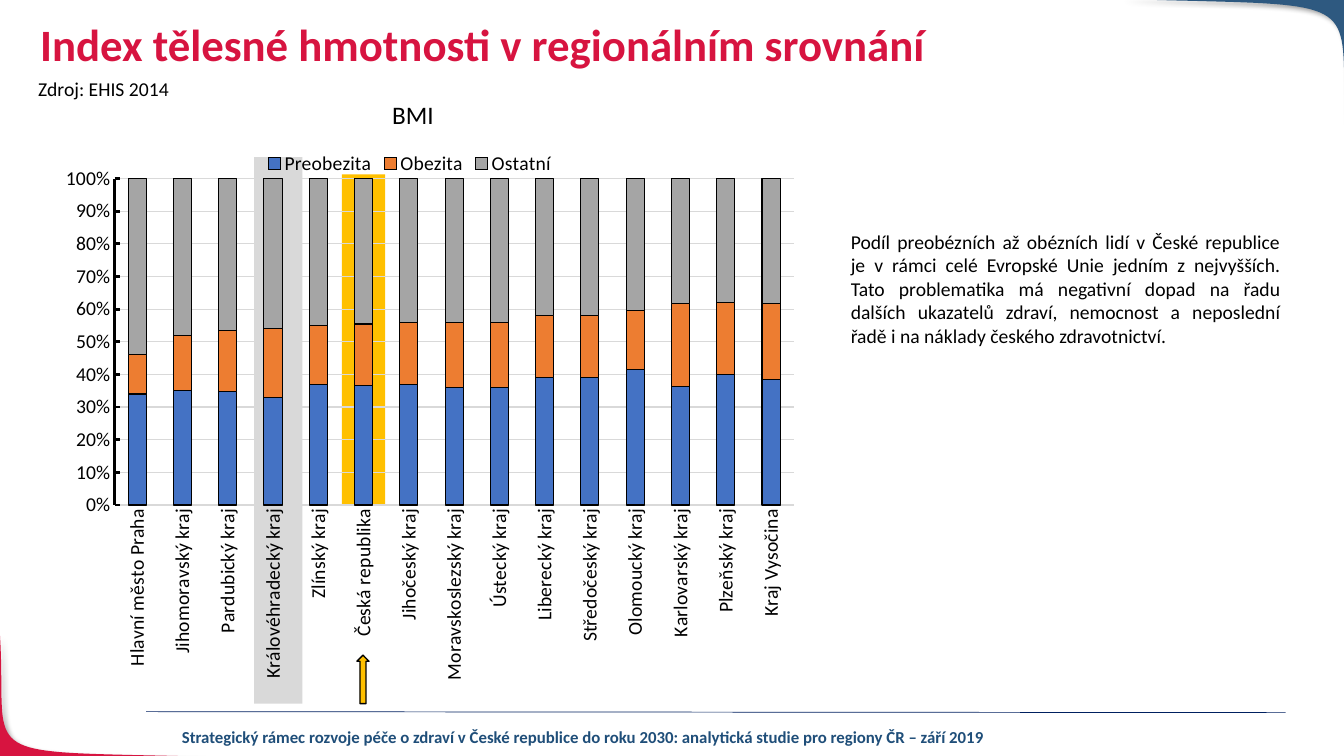
import pptx
import pptx.chart.data
import pptx.dml.color
import pptx.enum.chart
import pptx.enum.shapes
import pptx.enum.text
import pptx.oxml
import pptx.oxml.ns
import pptx.util

PX = 9144  # 100 px to the inch
SLIDE_W, SLIDE_H = 1333, 750
FONT = "Calibri"
BLACK, GRID, CRIMSON, AMBER = "000000", "D9D9D9", "D71440", "FFC000"
ALIGN = pptx.enum.text.PP_ALIGN
SHAPE = pptx.enum.shapes.MSO_SHAPE
XL = pptx.enum.chart

REGIONS = [
    "Hlavní město Praha", "Jihomoravský kraj", "Pardubický kraj",
    "Královéhradecký kraj", "Zlínský kraj", "Česká republika",
    "Jihočeský kraj", "Moravskoslezský kraj", "Ústecký kraj",
    "Liberecký kraj", "Středočeský kraj", "Olomoucký kraj",
    "Karlovarský kraj", "Plzeňský kraj", "Kraj Vysočina",
]
BMI_GROUPS = [
    ("Preobezita", "4472C4", [34, 35, 35, 33, 37, 37, 37, 36, 36, 39, 39, 41, 36, 40, 38]),
    ("Obezita", "ED7D31", [12, 17, 19, 21, 18, 19, 19, 20, 20, 19, 19, 18, 25, 22, 23]),
    ("Ostatní", "A5A5A5", [54, 48, 47, 46, 45, 45, 44, 44, 44, 42, 42, 40, 38, 38, 38]),
]


def rgb(color):
    return pptx.dml.color.RGBColor.from_string(color)


def emu(*lengths):
    return [length * PX for length in lengths]


def xml(tag, content="", attributes=""):
    """Build one element in the chart (c) or drawing (a) namespace."""
    spaces = pptx.oxml.ns.nsdecls("a", "c")
    return pptx.oxml.parse_xml(f"<{tag} {spaces} {attributes}>{content}</{tag}>")


def set_font(font, size, color=BLACK, bold=False):
    font.name, font.size, font.bold = FONT, pptx.util.Pt(size), bold
    font.color.rgb = rgb(color)


def set_line(line, color, width):
    line.color.rgb = rgb(color)
    line.width = pptx.util.Pt(width)


def add_text(slide, box, text, size, color=BLACK, bold=False,
             align=ALIGN.LEFT, wrap=True, spacing=None):
    frame = slide.shapes.add_textbox(*emu(*box)).text_frame
    frame.word_wrap = wrap
    frame.text = text
    paragraph = frame.paragraphs[0]
    paragraph.alignment = align
    paragraph.line_spacing = spacing
    for run in paragraph.runs:
        set_font(run.font, size, color, bold)


def add_block(slide, kind, box, color):
    block = slide.shapes.add_shape(kind, *emu(*box))
    block.shadow.inherit = False
    block.fill.solid()
    block.fill.fore_color.rgb = rgb(color)
    block.line.fill.background()
    return block


def add_corner(slide, box, start, controls, end, corner, color):
    """Fill the area between a Bézier curve and a slide corner."""
    left, top = box
    steps = 40
    curve = []
    for step in range(steps + 1):
        t = step / steps
        weights = ((1 - t) ** 3, 3 * t * (1 - t) ** 2, 3 * t * t * (1 - t), t ** 3)
        points = (start, *controls, end)
        curve.append(tuple(
            round((origin + sum(w * p[axis] for w, p in zip(weights, points))) * PX)
            for axis, origin in enumerate((left, top))))
    builder = slide.shapes.build_freeform(*curve[0], scale=1.0)
    builder.add_line_segments(curve[1:] + [((left + corner[0]) * PX, (top + corner[1]) * PX)])
    shape = builder.convert_to_shape()
    shape.fill.solid()
    shape.fill.fore_color.rgb = rgb(color)
    shape.line.fill.background()
    shape.element.spPr.append(xml(
        "a:effectLst",
        '<a:outerShdw blurRad="50800" dist="38100" dir="2700000" algn="tl" rotWithShape="0">'
        '<a:srgbClr val="000000"><a:alpha val="40000"/></a:srgbClr></a:outerShdw>'))


def add_corners(slide):
    add_corner(slide, (-1, 630), (214, 121), ((-33, 114), (9, 129)), (1, 0), (0, 121), CRIMSON)
    add_corner(slide, (1111, -1), (0, 0), ((259, 8), (215, -9)), (224, 143), (224, 0), "2E5980")


def add_footer(slide, left, top):
    rule = slide.shapes.add_connector(
        pptx.enum.shapes.MSO_CONNECTOR.STRAIGHT,
        *emu(left, top, left + 1130, top + 1))
    set_line(rule.line, "002060", 0.5)
    rule.element.spPr.append(xml("a:effectLst"))
    add_text(slide, (left + 12, top + 10, 843, 30),
             "Strategický rámec rozvoje péče o zdraví v České republice do roku 2030: "
             "analytická studie pro regiony ČR – září 2019",
             12, "1F4E79", True, ALIGN.CENTER)


def manual_layout(target=None, **places):
    parts = f'<c:layoutTarget val="{target}"/>' if target else ""
    parts += "".join(f'<c:{key}Mode val="edge"/>' for key in "xy")
    parts += "".join(f'<c:{key} val="{value}"/>' for key, value in places.items())
    return xml("c:layout", f"<c:manualLayout>{parts}</c:manualLayout>")


def add_bmi_chart(slide, box):
    data = pptx.chart.data.CategoryChartData()
    data.categories = REGIONS
    for name, _, shares in BMI_GROUPS:
        data.add_series(name, shares)
    chart = slide.shapes.add_chart(
        XL.XL_CHART_TYPE.COLUMN_STACKED_100, *emu(*box), data).chart
    set_font(chart.font, 10)

    # Columns
    plot = chart.plots[0]
    plot.gap_width, plot.overlap, plot.vary_by_categories = 150, 100, False
    for series, (_, color, _) in zip(plot.series, BMI_GROUPS):
        series.format.fill.solid()
        series.format.fill.fore_color.rgb = rgb(color)
        set_line(series.format.line, BLACK, 0.75)

    # Title and legend
    chart.has_title = True
    heading = chart.chart_title.text_frame
    heading.text = "BMI"
    set_font(heading.paragraphs[0].runs[0].font, 18)
    chart.has_legend = True
    legend = chart.legend
    legend.position = XL.XL_LEGEND_POSITION.TOP
    legend.include_in_layout = False
    set_font(legend.font, 14)

    # Axes
    regions, shares = chart.category_axis, chart.value_axis
    for axis, color, width in ((regions, GRID, 0.75), (shares, BLACK, 2)):
        set_font(axis.tick_labels.font, 14)
        set_line(axis.format.line, color, width)
    regions.major_tick_mark = XL.XL_TICK_MARK.NONE
    regions.has_major_gridlines = False
    shares.major_tick_mark = XL.XL_TICK_MARK.INSIDE
    shares.has_major_gridlines = True
    set_line(shares.major_gridlines.format.line, GRID, 0.75)
    shares.tick_labels.number_format = "0%"
    shares.tick_labels.number_format_is_linked = False

    # Upright region labels, fixed layout and clear background
    space = chart.element
    upright = space.find(".//" + pptx.oxml.ns.qn("c:catAx")).find(
        pptx.oxml.ns.qn("c:txPr")).find(pptx.oxml.ns.qn("a:bodyPr"))
    upright.set("rot", "-5400000")
    upright.set("vert", "horz")
    area = space.find(".//" + pptx.oxml.ns.qn("c:plotArea"))
    for automatic in area.findall(pptx.oxml.ns.qn("c:layout")):
        area.remove(automatic)
    area.insert(0, manual_layout("inner", x=0.124, y=0.157, w=0.856, h=0.493))
    key = space.find(".//" + pptx.oxml.ns.qn("c:legend"))
    for automatic in key.findall(pptx.oxml.ns.qn("c:layout")):
        key.remove(automatic)
    key.insert(1, manual_layout(x=0.31, y=0.11))
    clear = "<a:noFill/><a:ln><a:noFill/></a:ln>"
    area.append(xml("c:spPr", clear))
    space.find(pptx.oxml.ns.qn("c:txPr")).addprevious(xml("c:spPr", clear))


def add_comparison(slide, left, top):
    """Place the chart with its highlighted regions."""
    add_block(slide, SHAPE.RECTANGLE, (left + 323, top + 99, 43, 327), AMBER)
    add_block(slide, SHAPE.RECTANGLE, (left + 236, top + 82, 48, 542), GRID)
    add_bmi_chart(slide, (left, top, 787, 657))
    arrow = add_block(slide, SHAPE.DOWN_ARROW, (left + 338, top + 576, 12, 48), AMBER)
    arrow.rotation = 180
    set_line(arrow.line, BLACK, 1)


def add_heading(slide, left, top):
    add_text(slide, (left, top, 1150, 69), "Index tělesné hmotnosti v regionálním srovnání",
             32, CRIMSON, True, spacing=0.9)
    add_text(slide, (left - 2, top + 53, 151, 34), "Zdroj: EHIS 2014", 14, wrap=False)


def add_commentary(slide, box):
    add_text(slide, box,
             "Podíl preobézních až obézních lidí v České republice\v"
             "je v rámci celé Evropské Unie jedním z nejvyšších. Tato problematika má "
             "negativní dopad na řadu dalších ukazatelů zdraví, nemocnost a neposlední "
             "řadě i na náklady českého zdravotnictví.",
             14, align=ALIGN.JUSTIFY)


def main():
    deck = pptx.Presentation()
    deck.slide_width, deck.slide_height = emu(SLIDE_W, SLIDE_H)
    slide = deck.slides.add_slide(deck.slide_layouts[6])
    add_corners(slide)
    add_footer(slide, 145, 706)
    add_comparison(slide, 16, 74)
    add_commentary(slide, (834, 223, 446, 128))
    add_heading(slide, 30, 18)
    deck.save("out.pptx")


if __name__ == "__main__":
    main()
